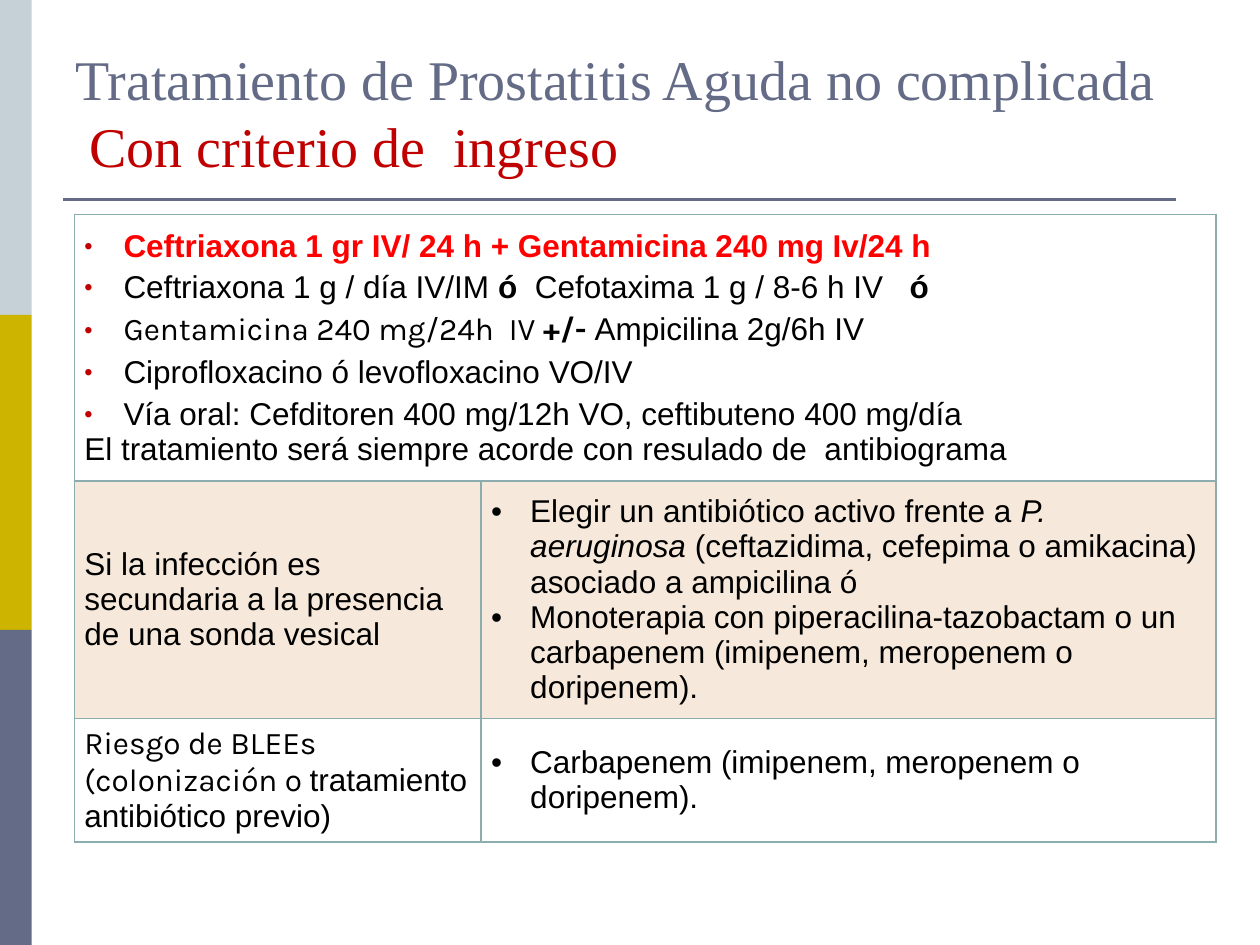
import pptx
import pptx.dml.color
import pptx.enum.shapes
import pptx.enum.text
import pptx.oxml
import pptx.oxml.ns
import pptx.util
from lxml import etree

Cm = pptx.util.Cm
Pt = pptx.util.Pt
COLORS = {"mist": "C5D1D7", "mustard": "CCB400", "slate": "646B86", "crimson": "C00000",
          "red": "FF0000", "black": "000000", "cream": "F6E9DB", "border": "8CADAE"}

BOLD = {"bold": True}
KARLA = {"name": "Karla"}
REGIMENS = [
    [("Ceftriaxona 1 gr IV/ 24 h + Gentamicina 240 mg Iv/24 h", {"bold": True, "color": "red"})],
    [("Ceftriaxona 1 g / día IV/IM ", {}), ("ó ", BOLD),
     (" Cefotaxima 1 g / 8-6 h IV  ", {}), (" ó", BOLD)],
    [("Gentamicina 240 mg/24h  IV ", KARLA), ("+/- ", {**KARLA, **BOLD}),
     ("Ampicilina 2g/6h IV", {})],
    [("Ciprofloxacino ó levofloxacino VO/IV", {})],
    [("Vía oral: Cefditoren 400 mg/12h VO, ceftibuteno 400 mg/día", {})],
]
CLOSING = [[("El tratamiento será siempre acorde con resulado de  antibiograma", {})]]
CATHETER = [[("Si la infección es secundaria a la presencia", {})], [("de una sonda vesical", {})]]
CATHETER_OPTIONS = [
    [("Elegir un antibiótico activo frente a ", {}), ("P. aeruginosa ", {"italic": True}),
     ("(ceftazidima, cefepima o amikacina) asociado a ampicilina ó", {})],
    [("Monoterapia con piperacilina-tazobactam o un carbapenem "
      "(imipenem, meropenem o doripenem).", {})],
]
RESISTANCE = [[("Riesgo de BLEEs (colonización o ", KARLA), ("tratamiento antibiótico previo)", {})]]
RESISTANCE_OPTIONS = [[("Carbapenem (imipenem, meropenem o doripenem).", {})]]


def rgb(name):
    return pptx.dml.color.RGBColor.from_string(COLORS[name])


def add_xml(parent, tag, **attributes):
    element = etree.SubElement(parent, pptx.oxml.ns.qn(tag))
    for key, value in attributes.items():
        element.set(key, str(value))
    return element


def add_side_band(slide, left, top, width, height):
    names = ("mist", "mustard", "slate")
    part = height // len(names)
    for index, name in enumerate(names):
        shape = slide.shapes.add_shape(pptx.enum.shapes.MSO_SHAPE.RECTANGLE,
                                       left, top + index * part, width, part)
        shape.shadow.inherit = False
        shape.fill.solid()
        shape.fill.fore_color.rgb = rgb(name)
        shape.line.fill.background()


def add_heading(slide, left, top, width, height):
    title = slide.shapes.title
    title.left, title.top, title.width, title.height = left, top, width, height
    frame = title.text_frame
    frame.word_wrap = True
    frame.auto_size = pptx.enum.text.MSO_AUTO_SIZE.NONE
    frame.vertical_anchor = pptx.enum.text.MSO_ANCHOR.BOTTOM
    paragraph = frame.paragraphs[0]
    paragraph.alignment = pptx.enum.text.PP_ALIGN.LEFT
    paragraph.font.name = "Times New Roman"
    paragraph.font.size = Pt(32)
    first = paragraph.add_run()
    first.text = "Tratamiento de Prostatitis Aguda no complicada"
    first.font.color.rgb = rgb("slate")
    paragraph.add_line_break()
    second = paragraph.add_run()
    second.text = " Con criterio de  ingreso"
    second.font.color.rgb = rgb("crimson")

    rule_top = top + height + Cm(0.28)
    rule = slide.shapes.add_connector(pptx.enum.shapes.MSO_CONNECTOR.STRAIGHT,
                                      left, rule_top, left + Cm(22.43), rule_top)
    rule.line.color.rgb = rgb("slate")
    rule.line.width = Pt(1.5)
    add_xml(rule._element.spPr, "a:effectLst")


def set_bullet(paragraph, color=None, size=None):
    properties = paragraph._p.get_or_add_pPr()
    properties.set("marL", str(Cm(0.79)))
    properties.set("indent", str(-Cm(0.79)))
    if color:
        add_xml(add_xml(properties, "a:buClr"), "a:srgbClr", val=COLORS[color])
    if size:
        add_xml(properties, "a:buSzPct", val=size * 1000)
    add_xml(properties, "a:buFont", typeface="Arial")
    add_xml(properties, "a:buChar", char="•")


def write_paragraphs(cell, paragraphs, bullet=None, space_before=0):
    frame = cell.text_frame
    for runs in paragraphs:
        paragraph = frame.paragraphs[0]
        if paragraph.runs:
            paragraph = frame.add_paragraph()
        paragraph.space_before = Pt(space_before)
        if bullet is not None:
            set_bullet(paragraph, **bullet)
        paragraph.font.size = Pt(18)
        paragraph.font.name = "Arial"
        for text, style in runs:
            run = paragraph.add_run()
            run.text = text
            run.font.color.rgb = rgb(style.get("color", "black"))
            for key in ("name", "bold", "italic"):
                if key in style:
                    setattr(run.font, key, style[key])


def style_cell(cell, fill):
    cell.vertical_anchor = pptx.enum.text.MSO_ANCHOR.MIDDLE
    cell.margin_left = cell.margin_right = Cm(0.2)
    cell.margin_top = cell.margin_bottom = Cm(0.1)
    properties = cell._tc.get_or_add_tcPr()
    for side in ("a:lnL", "a:lnR", "a:lnT", "a:lnB"):
        line = add_xml(properties, side, w=Pt(1))
        add_xml(add_xml(line, "a:solidFill"), "a:srgbClr", val=COLORS["border"])
    if fill:
        cell.fill.solid()
        cell.fill.fore_color.rgb = rgb(fill)
    else:
        cell.fill.background()


def add_treatment_table(slide, left, top, width, height):
    table = slide.shapes.add_table(3, 2, left, top, width, height).table
    table.first_row = table.horz_banding = False
    table.columns[0].width = Cm(8.2)
    table.columns[1].width = width - Cm(8.2)
    for row, row_height, fill in zip(table.rows, (5.38, 4.78, 2.49), (None, "cream", None)):
        row.height = Cm(row_height)
        for cell in row.cells:
            style_cell(cell, fill)
    regimens = table.cell(0, 0)
    regimens.merge(table.cell(0, 1))
    write_paragraphs(regimens, REGIMENS, {"color": "crimson", "size": 75}, 3.6)
    write_paragraphs(regimens, CLOSING)
    write_paragraphs(table.cell(1, 0), CATHETER)
    write_paragraphs(table.cell(1, 1), CATHETER_OPTIONS, {})
    write_paragraphs(table.cell(2, 0), RESISTANCE)
    write_paragraphs(table.cell(2, 1), RESISTANCE_OPTIONS, {})


def main():
    presentation = pptx.Presentation()
    presentation.slide_width = Cm(25.4)
    presentation.slide_height = Cm(19.05)
    slide = presentation.slides.add_slide(presentation.slide_layouts[5])
    add_side_band(slide, 0, 0, Cm(0.64), presentation.slide_height)
    add_heading(slide, Cm(1.27), Cm(0.56), Cm(22.86), Cm(3.18))
    add_treatment_table(slide, Cm(1.5), Cm(4.32), Cm(23.01), Cm(12.65))
    presentation.save("out.pptx")


if __name__ == "__main__":
    main()
